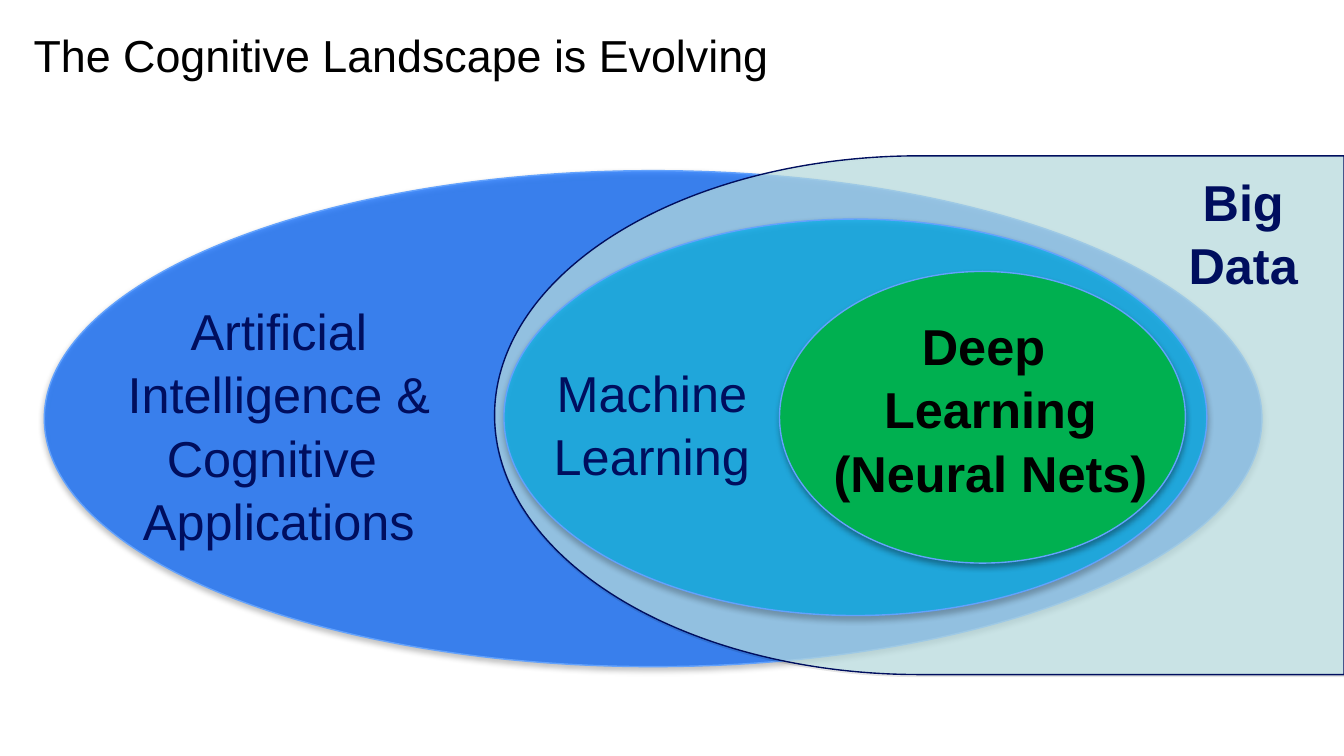
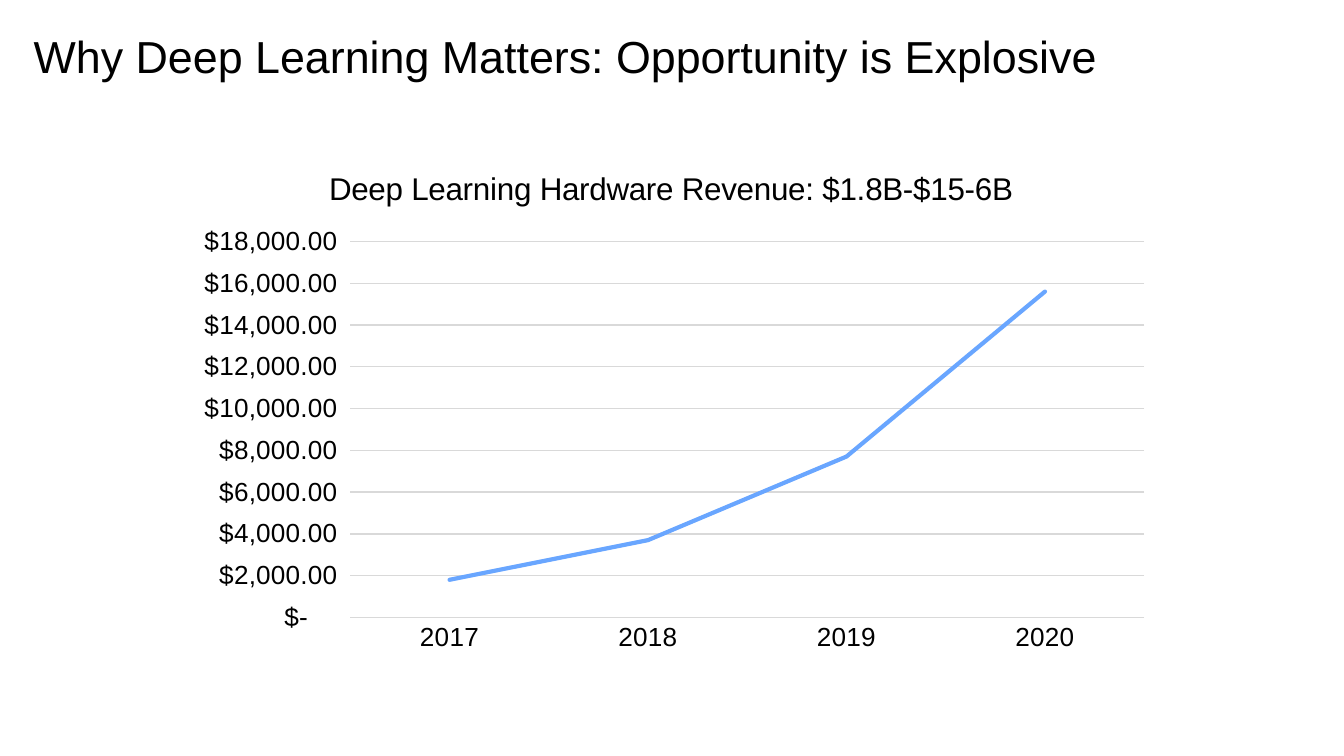
from lxml.etree import SubElement
from pptx import Presentation
from pptx.chart.data import CategoryChartData
from pptx.dml.color import RGBColor
from pptx.enum.chart import XL_CHART_TYPE, XL_MARKER_STYLE, XL_TICK_MARK
from pptx.enum.shapes import MSO_SHAPE
from pptx.enum.text import MSO_ANCHOR, MSO_AUTO_SIZE, PP_ALIGN
from pptx.oxml.ns import qn
from pptx.util import Inches, Pt

COLS, ROWS = 100, 56.25
FONT = "Arial"
BLACK, NAVY, GRID, SKY = "000000", "000E5E", "D9D9D9", "63A2FD"
DOLLARS = '_([$$-409]* #,##0.00_);_([$$-409]* \\(#,##0.00\\);_([$$-409]* "-"??_);_(@_)'


def rgb(value):
    return RGBColor.from_string(value)


class Deck:
    """Holds the shared style, a 100-column grid and the current slide."""

    def __init__(self):
        self.prs = Presentation()
        self.prs.slide_width, self.prs.slide_height = Inches(10), Inches(5.625)
        self.s = None

    def grid(self, left, top, width, height):
        col, row = self.prs.slide_width / COLS, self.prs.slide_height / ROWS
        return [round(n * unit) for n, unit in zip((left, top, width, height), (col, row) * 2)]

    def style(self, font, size, color, bold=False):
        font.name, font.size, font.bold = FONT, Pt(size), bold
        font.color.rgb = rgb(color)

    def stroke(self, line, color, width=0.75):
        line.color.rgb, line.width = rgb(color), Pt(width)

    def slide(self, title, top, width):
        self.s = self.prs.slides.add_slide(self.prs.slide_layouts[6])
        tf = self.s.shapes.add_textbox(*self.grid(2.5, top, width, 4.2)).text_frame
        tf.margin_left = tf.margin_right = tf.margin_top = tf.margin_bottom = 0
        tf.word_wrap, tf.vertical_anchor = True, MSO_ANCHOR.MIDDLE
        p = tf.paragraphs[0]
        p.line_spacing = 0.9
        r = p.add_run()
        r.text = title
        self.style(r.font, 24, BLACK)

    def region(self, kind, at, fill, line=SKY, alpha=70, shadow=(35, 3.1, 1.8), flip=False):
        sp = self.s.shapes.add_shape(kind, *self.grid(*at))
        sp.fill.solid()
        sp.fill.fore_color.rgb = rgb(fill)
        self.stroke(sp.line, line)
        sp.shadow.inherit = False
        pr = sp._element.spPr
        if alpha < 100:
            self.fade(pr.find(qn("a:solidFill"))[0], alpha)
        if flip:
            pr.find(qn("a:xfrm")).set("flipH", "1")
        opacity, blur, dist = shadow
        outer = SubElement(pr.find(qn("a:effectLst")), qn("a:outerShdw"), dir="5400000",
                           blurRad=str(Pt(blur)), dist=str(Pt(dist)), rotWithShape="0")
        self.fade(SubElement(outer, qn("a:srgbClr"), val=BLACK), opacity)

    def fade(self, color, percent):
        SubElement(color, qn("a:alpha"), val=str(percent * 1000))

    def label(self, at, paragraphs, color=NAVY, bold=False):
        tf = self.s.shapes.add_textbox(*self.grid(*at)).text_frame
        tf.word_wrap, tf.auto_size = False, MSO_AUTO_SIZE.SHAPE_TO_FIT_TEXT
        for i, lines in enumerate(paragraphs):
            p = tf.add_paragraph() if i else tf.paragraphs[0]
            p.alignment, p.line_spacing = PP_ALIGN.CENTER, 1.05
            for j, line in enumerate(lines.split("\n")):
                if j:
                    p.add_line_break()
                r = p.add_run()
                r.text = line
                self.style(r.font, 27, color, bold)

    def line_chart(self, at, title, categories, values, color):
        data = CategoryChartData()
        data.categories = categories
        data.add_series("Series 1", values)
        chart = self.s.shapes.add_chart(XL_CHART_TYPE.LINE, *self.grid(*at), data).chart
        self.style(chart.font, 14, BLACK)
        chart.has_legend, chart.has_title = False, True
        chart.chart_title.include_in_layout = False
        r = chart.chart_title.text_frame.paragraphs[0].add_run()
        r.text = title
        self.style(r.font, 16.8, BLACK)
        for axis in (chart.category_axis, chart.value_axis):
            axis.major_tick_mark = axis.minor_tick_mark = XL_TICK_MARK.NONE
            self.style(axis.tick_labels.font, 14, BLACK)
        self.stroke(chart.category_axis.format.line, GRID)
        axis = chart.value_axis
        axis.minimum_scale, axis.maximum_scale, axis.major_unit = 0, 18000, 2000
        axis.format.line.fill.background()
        self.stroke(axis.major_gridlines.format.line, GRID)
        axis.tick_labels.number_format = DOLLARS
        axis.tick_labels.number_format_is_linked = False
        plot = chart.plots[0]
        plot.vary_by_categories = False
        series = plot.series[0]
        series.smooth, series.marker.style = False, XL_MARKER_STYLE.NONE
        self.stroke(series.format.line, color, 2.25)
        series.format.line._ln.set("cap", "rnd")


def landscape(deck):
    deck.slide("The Cognitive Landscape is Evolving", 2.2, 56.9)
    deck.region(MSO_SHAPE.OVAL, (3.3, 12.7, 90.6, 36.9), "0064FF")
    deck.label((8.4, 21.6, 24.7, 19.2),
               ["Artificial", "Intelligence &", "Cognitive ", "Applications"])
    deck.region(MSO_SHAPE.FLOWCHART_DELAY, (36.8, 11.6, 63.2, 38.6), "BBE0E3",
                line=NAVY, shadow=(9, 0, 1), flip=True)
    deck.label((87.4, 12, 10.2, 10.1), ["Big", "Data"], bold=True)
    deck.region(MSO_SHAPE.OVAL, (37.5, 16.3, 52.3, 29.5), "00B0F0")
    deck.label((40.1, 26.2, 16.8, 10.1), ["Machine", "Learning"])
    deck.region(MSO_SHAPE.OVAL, (58, 20.2, 30.2, 21.7), "00B050", alpha=100)
    deck.label((60.9, 22.7, 25.6, 14.7), ["Deep \nLearning\n(Neural Nets)"], BLACK, True)


def opportunity(deck):
    deck.slide("Why Deep Learning Matters: Opportunity is Explosive", 2.3, 85.8)
    deck.line_chart((13.2, 10.8, 73.4, 38.5), "Deep Learning Hardware Revenue: $1.8B-$15-6B",
                    ["2017", "2018", "2019", "2020"], [1800, 3700, 7700, 15600], "69A6FF")


def main():
    deck = Deck()
    landscape(deck)
    opportunity(deck)
    deck.prs.save("out.pptx")


if __name__ == "__main__":
    main()
